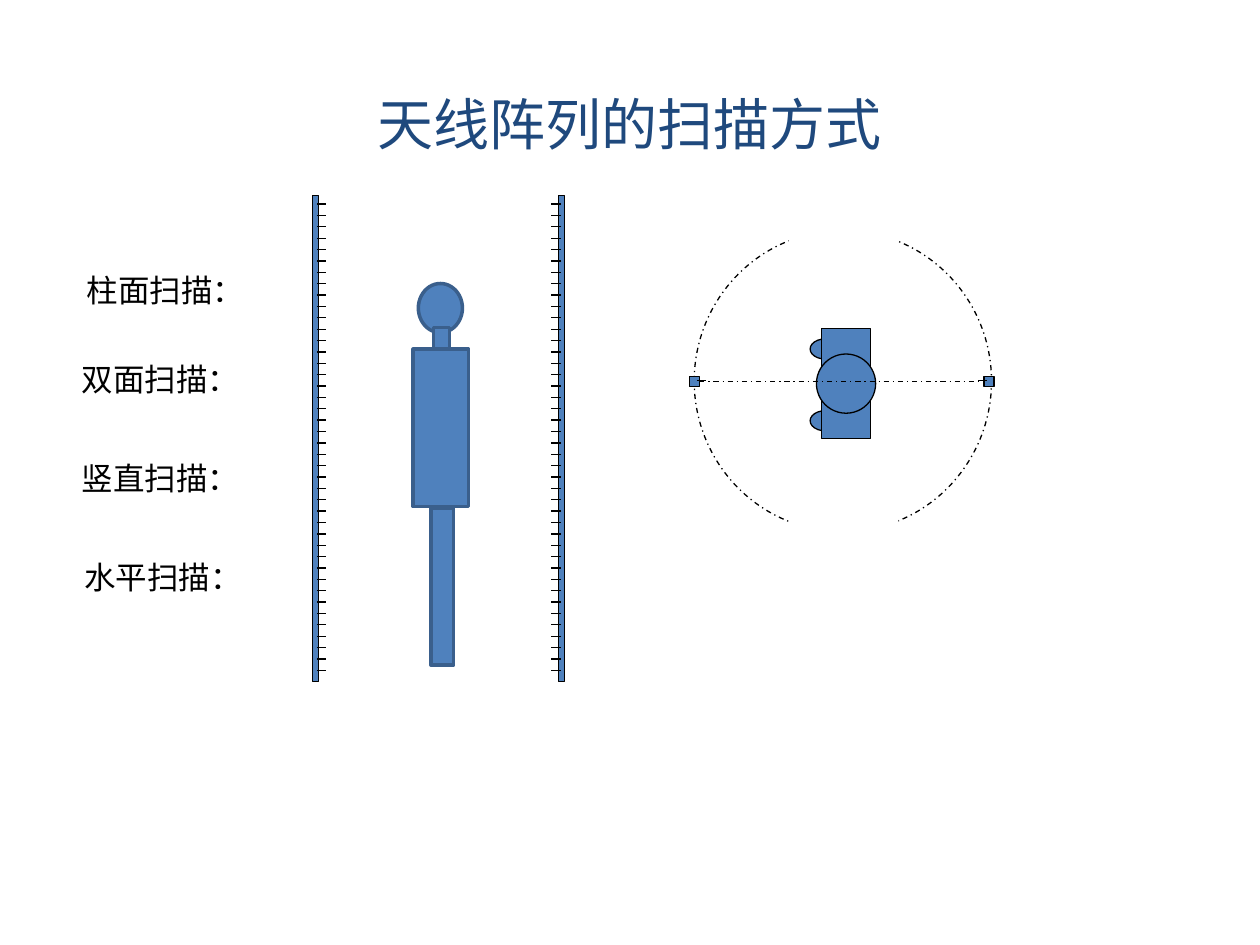
from lxml import etree
from pptx import Presentation
from pptx import util as u
from pptx.dml.color import RGBColor
from pptx.enum import dml, shapes, text
from pptx.oxml.ns import qn

COLORS = {
    "title": "1F497D",
    "text": "000000",
    "line": "000000",
    "blue": "4F81BD",
    "outline": "3A5F8C",
    "white": "FFFFFF",
}
RECTANGLE = shapes.MSO_SHAPE.RECTANGLE
OVAL = shapes.MSO_SHAPE.OVAL
DASH_DOT = dml.MSO_LINE.DASH_DOT


def add_figure(group, kind, box, fill="blue", line="line", width=0.75):
    """Add a preset shape; a fill or line of None is left empty."""
    shape = group.shapes.add_shape(kind, *(u.Inches(value) for value in box))
    shape.shadow.inherit = False
    if fill:
        shape.fill.solid()
        shape.fill.fore_color.rgb = RGBColor.from_string(COLORS[fill])
    else:
        shape.fill.background()
    if line:
        shape.line.color.rgb = RGBColor.from_string(COLORS[line])
        shape.line.width = u.Pt(width)
    else:
        shape.line.fill.background()
    return shape


def add_level_line(group, start, end, y):
    connector = group.shapes.add_connector(
        shapes.MSO_CONNECTOR.STRAIGHT,
        u.Inches(start), u.Inches(y), u.Inches(end), u.Inches(y))
    connector.line.color.rgb = RGBColor.from_string(COLORS["line"])
    connector.line.width = u.Pt(0.75)
    etree.SubElement(connector._element.spPr, qn("a:effectLst"))
    return connector


presentation = Presentation()
presentation.slide_width = u.Inches(10)
presentation.slide_height = u.Inches(7.5)
slide = presentation.slides.add_slide(presentation.slide_layouts[6])

# Title and the list of scanning modes
texts = [
    ("天线阵列的扫描方式", (0.75, 0.6, 8.5, 0.75), 32, "title"),
    ("柱面扫描：", (0.59, 2.1, 1.46, 0.4), 18, "text"),
    ("双面扫描：", (0.55, 2.81, 1.46, 0.4), 18, "text"),
    ("竖直扫描：", (0.55, 3.59, 1.46, 0.4), 18, "text"),
    ("水平扫描：", (0.57, 4.38, 1.46, 0.4), 18, "text"),
]
for words, box, size, color in texts:
    is_title = color == "title"
    text_box = slide.shapes.add_textbox(*(u.Inches(value) for value in box))
    frame = text_box.text_frame
    frame.word_wrap = is_title
    paragraph = frame.paragraphs[0]
    if is_title:
        frame.vertical_anchor = text.MSO_ANCHOR.MIDDLE
        paragraph.alignment = text.PP_ALIGN.CENTER
    else:
        frame.auto_size = text.MSO_AUTO_SIZE.SHAPE_TO_FIT_TEXT
    run = paragraph.add_run()
    run.text = words
    run.font.name = "Calibri"
    run.font.size = u.Pt(size)
    run.font.color.rgb = RGBColor.from_string(COLORS[color])

# Two vertical antenna arrays facing each other
TICK_COUNT = 42
FIRST_TICK, LAST_TICK = 1.62, 5.32
tick_gap = (LAST_TICK - FIRST_TICK) / (TICK_COUNT - 1)
for mast_left, tick_start, tick_end in [(2.48, 2.52, 2.59), (4.43, 4.45, 4.37)]:
    array = slide.shapes.add_group_shape()
    add_figure(array, RECTANGLE, (mast_left, 1.55, 0.05, 3.86))
    for index in range(TICK_COUNT):
        add_level_line(array, tick_start, tick_end, FIRST_TICK + index * tick_gap)

# Person seen from the front: head, neck, torso, legs
person = slide.shapes.add_group_shape()
for kind, box in [
    (OVAL, (3.32, 2.25, 0.35, 0.39)),
    (RECTANGLE, (3.44, 2.6, 0.13, 0.17)),
    (RECTANGLE, (3.28, 2.77, 0.44, 1.25)),
    (RECTANGLE, (3.42, 4.03, 0.18, 1.25)),
]:
    add_figure(person, kind, box, line="outline", width=2)

# Top view: scan circle opened by a white band, emitters, person
top_view = slide.shapes.add_group_shape()
scan_circle = add_figure(top_view, OVAL, (5.51, 1.83, 2.36, 2.39), fill=None)
scan_circle.line.dash_style = DASH_DOT
add_figure(top_view, RECTANGLE, (6.26, 1.47, 0.87, 3.39), fill="white", line=None)

emitters = []
for left, tick_start, tick_end in [(5.47, 5.53, 5.6), (7.81, 7.83, 7.76)]:
    emitters.append(add_figure(top_view, RECTANGLE, (left, 2.99, 0.08, 0.08)))
    add_level_line(top_view, tick_start, tick_end, 3.02)

for foot_top in (3.26, 2.69):
    add_figure(top_view, OVAL, (6.43, foot_top, 0.24, 0.16))
add_figure(top_view, RECTANGLE, (6.52, 2.61, 0.39, 0.87))
add_figure(top_view, OVAL, (6.48, 2.81, 0.47, 0.47))

beam = add_level_line(top_view, 5.55, 7.81, 3.03)
beam.line.dash_style = DASH_DOT
beam.begin_connect(emitters[0], 3)
beam.end_connect(emitters[1], 1)

presentation.save("out.pptx")
